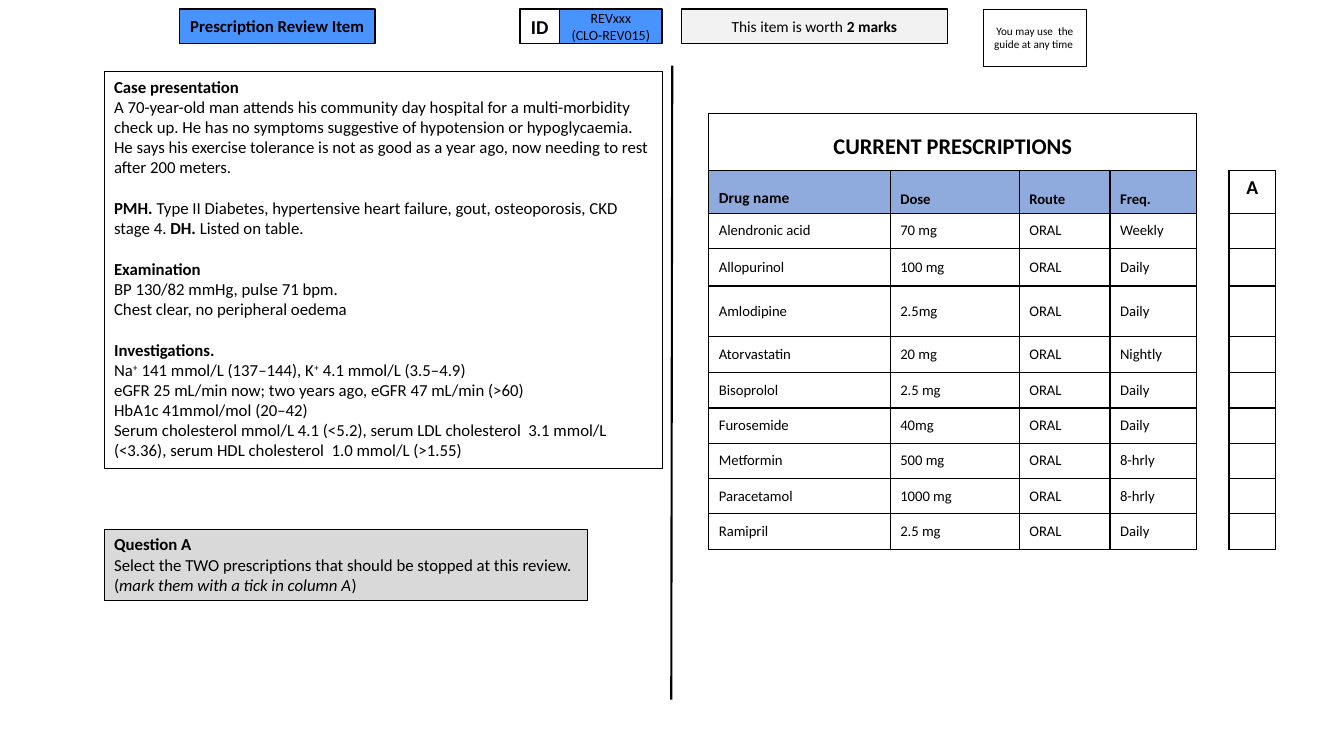
from lxml import etree
from pptx import Presentation
from pptx.dml.color import RGBColor
from pptx.enum import shapes, text
from pptx.oxml import ns
from pptx.util import Pt

FONT = "Calibri"
BLACK, WHITE, BLUE = "000000", "FFFFFF", "4993FF"
LEFT, CENTER = text.PP_ALIGN.LEFT, text.PP_ALIGN.CENTER
TOP, MIDDLE, BOTTOM = (text.MSO_ANCHOR.TOP, text.MSO_ANCHOR.MIDDLE,
                       text.MSO_ANCHOR.BOTTOM)
LINE_GAP = 14.6
GAP_COLUMN, ANSWER_COLUMN = 4, 5

# A paragraph is a list of (words, style); b bold, i italic, + superscript.
CASE_SECTIONS = [
    [[("Case presentation", "b")],
     [("A 70-year-old man attends his community day hospital for a "
       "multi-morbidity check up. He has no symptoms suggestive of "
       "hypotension or hypoglycaemia.", "")],
     [("He says his exercise tolerance is not as good as a year ago, now "
       "needing to rest after 200 meters.", "")]],
    [[("PMH.", "b"),
      (" Type II Diabetes, hypertensive heart failure, gout, osteoporosis, "
       "CKD stage 4. ", ""),
      ("DH. ", "b"), ("Listed on table.", "")]],
    [[("Examination", "b")],
     [("BP 130/82 mmHg, pulse 71 bpm.", "")],
     [("Chest clear, no peripheral oedema", "")]],
    [[("Investigations.", "b")],
     [("Na", ""), ("+", "+"), (" 141 mmol/L (137–144), K", ""), ("+", "+"),
      (" 4.1 mmol/L (3.5–4.9)", "")],
     [("eGFR 25 mL/min now; two years ago, eGFR 47 mL/min (>60)", "")],
     [("HbA1c 41mmol/mol (20–42)", "")],
     [("Serum cholesterol mmol/L 4.1 (<5.2), serum LDL cholesterol  3.1 "
       "mmol/L (<3.36), serum HDL cholesterol  1.0 mmol/L (>1.55)", "")]],
]
QUESTION = [[
    [("Question A", "b")],
    [("Select the TWO prescriptions that should be stopped at this review.",
      "")],
    [("(", ""), ("mark them with a tick in column A", "i"), (")", "")],
]]
HEADINGS = ["Drug name", "Dose", "Route", "Freq."]
DRUGS = [
    ("Alendronic acid", "70 mg", "ORAL", "Weekly"),
    ("Allopurinol", "100 mg", "ORAL", "Daily"),
    ("Amlodipine", "2.5mg", "ORAL", "Daily"),
    ("Atorvastatin", "20 mg", "ORAL", "Nightly"),
    ("Bisoprolol", "2.5 mg", "ORAL", "Daily"),
    ("Furosemide", "40mg", "ORAL", "Daily"),
    ("Metformin", "500 mg", "ORAL", "8-hrly"),
    ("Paracetamol", "1000 mg", "ORAL", "8-hrly"),
    ("Ramipril", "2.5 mg", "ORAL", "Daily"),
]
COLUMN_WIDTHS = [129.6, 92.2, 64.8, 62, 23, 33.2]
ROW_HEIGHTS = [41, 30.5, 25.2, 26.8, 36.4, 25.6] + [25.2] * 5


def color(value):
    return RGBColor.from_string(value)


def style_span(span, size, style=""):
    span.font.name, span.font.size = FONT, Pt(size)
    span.font.color.rgb = color(BLACK)
    span.font.bold, span.font.italic = "b" in style, "i" in style
    if "+" in style:
        span.font._element.set("baseline", "30000")


def write(frame, sections, size, align):
    """Fill a text frame, leaving one line of space between sections."""
    first = True
    for section in sections:
        for number, spans in enumerate(section):
            para = frame.paragraphs[0] if first else frame.add_paragraph()
            para.alignment = align
            if number == 0 and not first:
                para.space_before = Pt(LINE_GAP)
            first = False
            for words, style in spans:
                span = para.add_run()
                span.text = words
                style_span(span, size, style)


def add_box(page, place, sections, size, fill=None, line=1.0, align=CENTER,
            anchor=MIDDLE, wrap=True):
    box = page.shapes.add_shape(shapes.MSO_SHAPE.RECTANGLE,
                                *[Pt(length) for length in place])
    box.shadow.inherit = False
    if fill:
        box.fill.solid()
        box.fill.fore_color.rgb = color(fill)
    else:
        box.fill.background()
    box.line.color.rgb = color(BLACK)
    box.line.width = Pt(line)
    frame = box.text_frame
    frame.word_wrap, frame.vertical_anchor = wrap, anchor
    write(frame, sections, size, align)


def add_divider(page, start, end):
    divider = page.shapes.add_connector(
        shapes.MSO_CONNECTOR.STRAIGHT, *[Pt(v) for v in start + end])
    divider.line.color.rgb = color(BLACK)
    divider.line.width = Pt(1.5)
    etree.SubElement(divider._element.spPr, ns.qn("a:effectLst"))


def set_borders(cell, sides):
    """Draw the named sides in black and clear the others."""
    properties = cell._tc.get_or_add_tcPr()
    for side in "LRTB":
        border = etree.SubElement(properties, ns.qn("a:ln" + side))
        if side in sides:
            border.set("w", str(Pt(1)))
            paint = etree.SubElement(border, ns.qn("a:solidFill"))
            etree.SubElement(paint, ns.qn("a:srgbClr")).set("val", BLACK)
        else:
            etree.SubElement(border, ns.qn("a:noFill"))


def cell_sides(row, column):
    if column == GAP_COLUMN:
        return "LR" if row else "L"
    if column == ANSWER_COLUMN and row == 0:
        return "B"
    return "LRTB"


def fill_cell(cell, words, size, style="", align=LEFT, anchor=MIDDLE):
    cell.vertical_anchor = anchor
    cell.text_frame.text = words
    para = cell.text_frame.paragraphs[0]
    para.alignment = align
    style_span(para.runs[0], size, style)


def add_prescriptions(page, left, top):
    table = page.shapes.add_table(
        len(ROW_HEIGHTS), len(COLUMN_WIDTHS), Pt(left), Pt(top),
        Pt(sum(COLUMN_WIDTHS)), Pt(sum(ROW_HEIGHTS))).table
    table.first_row = table.horz_banding = False
    for column, width in zip(table.columns, COLUMN_WIDTHS):
        column.width = Pt(width)
    for row, height in zip(table.rows, ROW_HEIGHTS):
        row.height = Pt(height)
    for row in range(len(ROW_HEIGHTS)):
        for column in range(len(COLUMN_WIDTHS)):
            cell = table.cell(row, column)
            set_borders(cell, cell_sides(row, column))
            cell.fill.solid()
            is_heading = row == 1 and column < GAP_COLUMN
            cell.fill.fore_color.rgb = color("8FAADC" if is_heading else WHITE)
            if column >= GAP_COLUMN and (row, column) != (1, ANSWER_COLUMN):
                cell.margin_top = cell.margin_bottom = 0

    # Title, headings and drug rows
    table.cell(0, 0).merge(table.cell(0, GAP_COLUMN - 1))
    fill_cell(table.cell(0, 0), "CURRENT PRESCRIPTIONS", 16, "b", CENTER,
              BOTTOM)
    table.cell(0, 0).margin_bottom = Pt(7)
    for column, heading in enumerate(HEADINGS):
        fill_cell(table.cell(1, column), heading, 10.5 if column else 11, "b",
                  anchor=BOTTOM)
    fill_cell(table.cell(1, ANSWER_COLUMN), "A", 14, "b", CENTER, TOP)
    for row, drug in enumerate(DRUGS, start=2):
        for column, words in enumerate(drug):
            fill_cell(table.cell(row, column), words, 10.5)


def main():
    deck = Presentation()
    deck.slide_width, deck.slide_height = Pt(960), Pt(540)
    page = deck.slides.add_slide(deck.slide_layouts[6])

    # Header strip
    strip_top, strip_height = 6.5, 24.5
    strip = [
        (128.2, 139.7, [[[("Prescription Review Item", "b")]]], 12, BLUE),
        (399.6, 73.4, [[[("REVxxx", "")], [("(CLO-REV015)", "")]]], 10, BLUE),
        (371.5, 28.1, [[[("ID", "b")]]], 14, None),
        (486.7, 190.1, [[[("This item is worth ", ""), ("2 marks", "b")]]], 11,
         "F2F2F2"),
    ]
    for left, width, sections, size, fill in strip:
        add_box(page, (left, strip_top, width, strip_height), sections, size,
                fill, wrap=False)
    add_box(page, (702.5, strip_top, 73.5, 40.5),
            [[[("You may use  the guide at any time ", "")]]], 8, line=0.25)

    # Case and question
    add_box(page, (74.4, 51, 399, 283.5), CASE_SECTIONS, 12, WHITE, 0.75, LEFT,
            TOP)
    add_box(page, (74.4, 378, 345, 51), QUESTION, 12, "D9D9D9", 0.75, LEFT,
            TOP)

    # Divider and prescriptions
    add_divider(page, (480.2, 46.8), (479.5, 499.7))
    add_prescriptions(page, 506.3, 80.8)

    deck.save("out.pptx")


if __name__ == "__main__":
    main()
